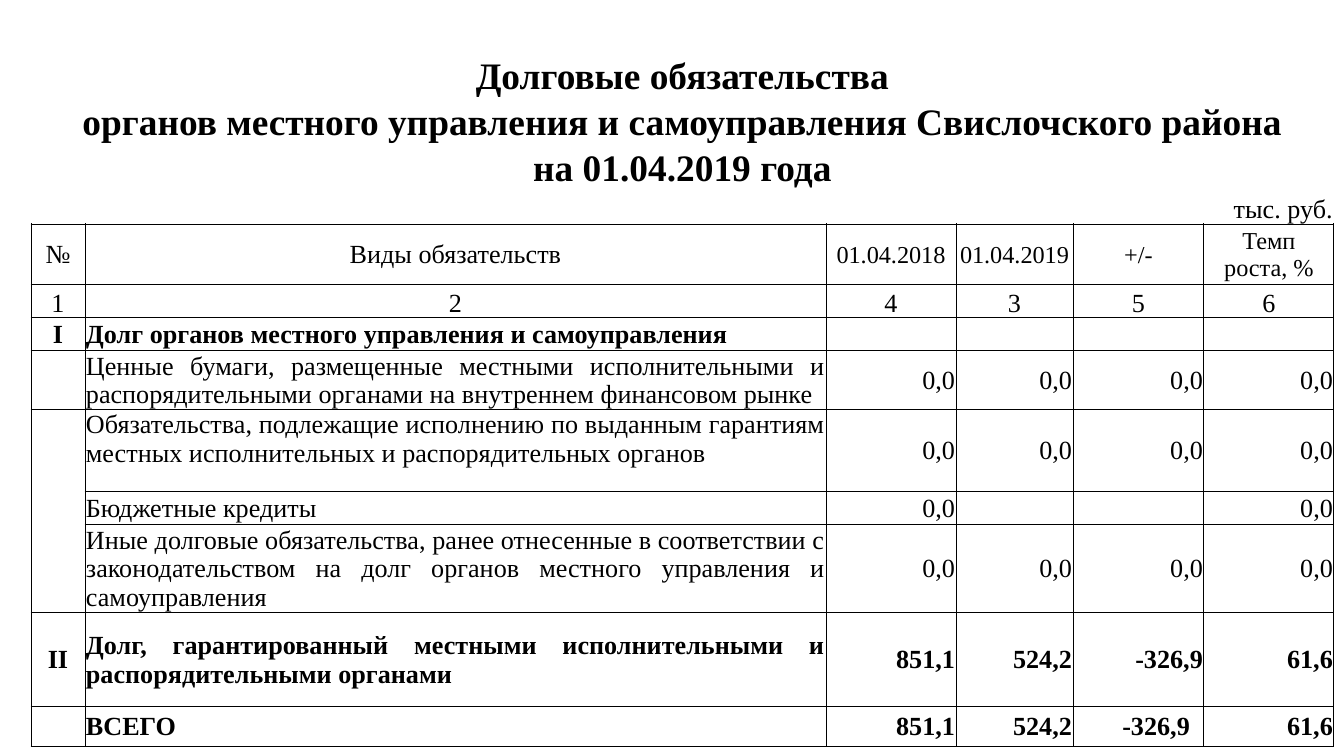
from lxml.etree import SubElement
from pptx import Presentation
from pptx.dml.color import RGBColor
from pptx.enum.text import MSO_ANCHOR as Anchor, PP_ALIGN as Align
from pptx.oxml.ns import qn
from pptx.util import Emu, Pt

EMU_PER_PX = 914400 / 134.4
COLORS = {"ink": "000000", "paper": "FFFFFF"}
FONT = "Times New Roman"
NO_STYLE = "{2D5ABB26-0587-4C30-8999-92F81FD0307C}"

TABLE_LEFT, TABLE_TOP = 31, 52
COLUMN_WIDTHS = [54, 741, 130, 117, 131, 130]
ROW_HEIGHTS = [46, 46, 46, 34, 61, 33, 30, 59, 82, 33, 88, 94, 40]

TITLE_LINES = [
    "Долговые обязательства",
    "органов местного управления и самоуправления Свислочского района",
    "на 01.04.2019 года",
]
UNIT = "тыс. руб."
HEADINGS = ["№", "Виды обязательств", "01.04.2018", "01.04.2019", "+/-", "Темп\nроста, %"]
COLUMN_NUMBERS = ["1", "2", "4", "3", "5", "6"]
ZEROS = ["0,0"] * 4
DEBT_ROWS = [
    ["I", "Долг органов местного управления и самоуправления"] + [""] * 4,
    ["", "Ценные бумаги, размещенные местными исполнительными и "
         "распорядительными органами на внутреннем финансовом рынке"] + ZEROS,
    ["", "Обязательства, подлежащие исполнению по выданным гарантиям "
         "местных исполнительных и распорядительных органов"] + ZEROS,
    ["", "Бюджетные кредиты", "0,0", "", "", "0,0"],
    ["", "Иные долговые обязательства, ранее отнесенные в соответствии с "
         "законодательством на долг органов местного управления и самоуправления"] + ZEROS,
    ["II", "Долг, гарантированный местными исполнительными и "
           "распорядительными органами", "851,1", "524,2", "-326,9", "61,6"],
    ["", "ВСЕГО", "851,1", "524,2", "-326,9", "61,6"],
]
UNIT_ROW = len(TITLE_LINES)
HEADING_ROW = UNIT_ROW + 1
NUMBER_ROW = HEADING_ROW + 1
FIRST_DEBT_ROW = NUMBER_ROW + 1
TOP_ALIGNED_DEBT = 2
BOLD_DEBTS = (0, 5, 6)
DETAIL_DEBTS = range(1, 5)
TOTAL_DEBT = 6


def px(length):
    return Emu(round(length * EMU_PER_PX))


def color(name):
    return RGBColor.from_string(COLORS[name])


def add_borders(cell, sides):
    """Draw the sides named by letters of "LRTB", in that order."""
    properties = cell._tc.get_or_add_tcPr()
    for side in sides:
        line = SubElement(properties, qn(f"a:ln{side}"), w=str(Pt(0.5)))
        fill = SubElement(line, qn("a:solidFill"))
        SubElement(fill, qn("a:srgbClr"), val=COLORS["ink"])


def write_cell(cell, text, size=14, bold=False, align=Align.CENTER,
               anchor=Anchor.MIDDLE, borders="LRTB", filled=False, right=1):
    cell.margin_left = cell.margin_top = px(1)
    cell.margin_right, cell.margin_bottom = px(right), 0
    cell.vertical_anchor = anchor
    add_borders(cell, borders)
    if filled:
        cell.fill.solid()
        cell.fill.fore_color.rgb = color("paper")
    else:
        cell.fill.background()
    frame = cell.text_frame
    for index, line in enumerate(text.split("\n")):
        paragraph = frame.add_paragraph() if index else frame.paragraphs[0]
        paragraph.alignment = align
        if not line:
            # An empty cell must not stretch its row with the default size.
            SubElement(paragraph._p, qn("a:endParaRPr"), sz=str(size * 100))
            continue
        run = paragraph.add_run()
        run.text = line
        run.font.name, run.font.size, run.font.bold = FONT, Pt(size), bold
        run.font.color.rgb = color("ink")


def add_grid(slide):
    table = slide.shapes.add_table(
        len(ROW_HEIGHTS), len(COLUMN_WIDTHS), px(TABLE_LEFT), px(TABLE_TOP),
        px(sum(COLUMN_WIDTHS)), px(sum(ROW_HEIGHTS))).table
    table.first_row = table.horz_banding = False
    table._tbl.tblPr.find(qn("a:tableStyleId")).text = NO_STYLE
    for column, width in zip(table.columns, COLUMN_WIDTHS):
        column.width = px(width)
    for row, height in zip(table.rows, ROW_HEIGHTS):
        row.height = px(height)
    return table


def write_title(table):
    last = len(COLUMN_WIDTHS) - 1
    for row in range(HEADING_ROW):
        table.cell(row, 0).merge(table.cell(row, last))
    for row, line in enumerate(TITLE_LINES):
        write_cell(table.cell(row, 0), line, 20, True, anchor=Anchor.BOTTOM, borders="")
    write_cell(table.cell(UNIT_ROW, 0), UNIT, align=Align.RIGHT,
               anchor=Anchor.BOTTOM, borders="B")


def write_headings(table):
    for column, (heading, number) in enumerate(zip(HEADINGS, COLUMN_NUMBERS)):
        write_cell(table.cell(HEADING_ROW, column), heading, 14 if column < 2 else 13)
        write_cell(table.cell(NUMBER_ROW, column), number, anchor=Anchor.BOTTOM)


def index_borders(debt):
    """Leave the number column open between the detail rows."""
    if debt not in DETAIL_DEBTS:
        return "LRTB"
    top = "T" if debt == DETAIL_DEBTS[0] else ""
    bottom = "B" if debt == DETAIL_DEBTS[-1] else ""
    return "LR" + top + bottom


def write_debts(table):
    for debt, (index, name, *values) in enumerate(DEBT_ROWS):
        row, bold = FIRST_DEBT_ROW + debt, debt in BOLD_DEBTS
        write_cell(table.cell(row, 0), index, bold=bold, borders=index_borders(debt))
        write_cell(table.cell(row, 1), name, bold=bold,
                   align=Align.LEFT if debt == TOTAL_DEBT else Align.JUSTIFY,
                   anchor=Anchor.TOP if debt == TOP_ALIGNED_DEBT else Anchor.MIDDLE)
        for column, value in enumerate(values, start=2):
            indented = debt == TOTAL_DEBT and column == 4
            write_cell(table.cell(row, column), value, bold=bold, align=Align.RIGHT,
                       filled=True, right=14 if indented else 1)


def main():
    presentation = Presentation()
    presentation.slide_width, presentation.slide_height = px(1344), px(756)
    slide = presentation.slides.add_slide(presentation.slide_layouts[6])
    table = add_grid(slide)
    write_title(table)
    write_headings(table)
    write_debts(table)
    presentation.save("out.pptx")


if __name__ == "__main__":
    main()
